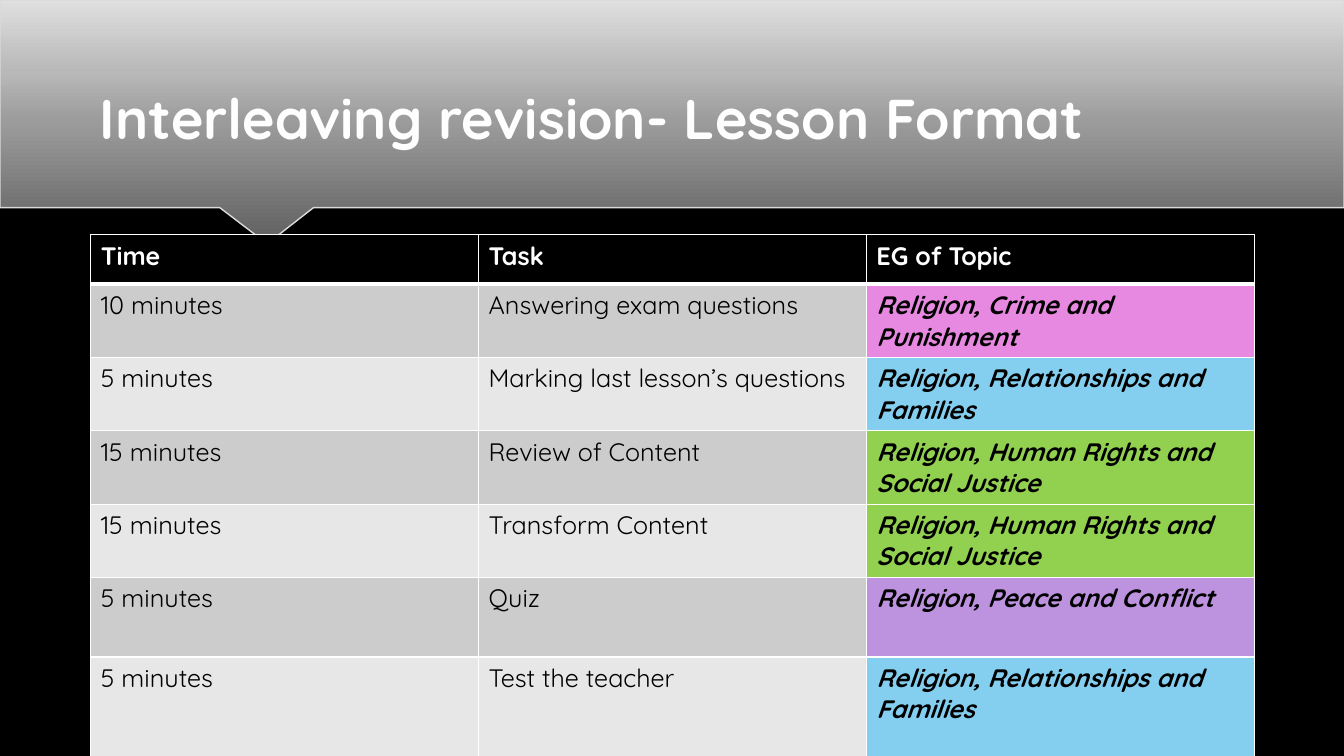
import dataclasses
import pptx
import pptx.dml.color
import pptx.enum.text
import pptx.oxml
import pptx.oxml.ns
import pptx.slide
import pptx.table
import pptx.text.text
import pptx.util

Inches = pptx.util.Inches
Pt = pptx.util.Pt
RGBColor = pptx.dml.color.RGBColor

FONT = "Quicksand"
BLACK = RGBColor(0x00, 0x00, 0x00)
WHITE = RGBColor(0xFF, 0xFF, 0xFF)
CREAM = RGBColor(0xFE, 0xFE, 0xFE)
EDGE = RGBColor(0xDA, 0xDA, 0xDA)
DARK = RGBColor(0xCC, 0xCC, 0xCC)
LIGHT = RGBColor(0xE7, 0xE7, 0xE7)
PINK = RGBColor(0xE7, 0x89, 0xE0)
BLUE = RGBColor(0x84, 0xCF, 0xF0)
GREEN = RGBColor(0x92, 0xD0, 0x50)
PURPLE = RGBColor(0xBD, 0x92, 0xDE)
FADE = (
    (0, RGBColor(0x61, 0x61, 0x61)),
    (50, RGBColor(0x9C, 0x9C, 0x9C)),
    (70, RGBColor(0xB8, 0xB8, 0xB8)),
    (100, RGBColor(0xDF, 0xDF, 0xDF)),
)
SHAPE = (
    (0, 0), (0, 2.06), (2.18, 2.06), (2.6, 2.38), (2.62, 2.39),
    (2.67, 2.39), (2.7, 2.38), (3.11, 2.06), (13.33, 2.06),
)


@dataclasses.dataclass(frozen=True)
class Step:
    time: str
    task: str
    topic: str
    tint: RGBColor
    height: float


HEADS = ("Time", "Task", "EG of Topic")
STEPS = (
    Step("10 minutes", "Answering exam questions",
         "Religion, Crime and Punishment", PINK, 0.7),
    Step("5 minutes", "Marking last lesson’s questions",
         "Religion, Relationships and Families", BLUE, 0.67),
    Step("15 minutes", "Review of Content",
         "Religion, Human Rights and Social Justice", GREEN, 0.7),
    Step("15 minutes", "Transform Content",
         "Religion, Human Rights and Social Justice", GREEN, 0.7),
    Step("5 minutes", "Quiz", "Religion, Peace and Conflict", PURPLE, 0.79),
    Step("5 minutes", "Test the teacher",
         "Religion, Relationships and Families", BLUE, 1),
)


def make(xml: str) -> pptx.oxml.xmlchemy.BaseOxmlElement:
    space = pptx.oxml.ns.nsdecls("a")
    return pptx.oxml.parse_xml(xml.replace(">", f" {space}>", 1))


def shade(alpha: int) -> pptx.oxml.xmlchemy.BaseOxmlElement:
    return make(
        f'<a:effectLst><a:outerShdw blurRad="{Pt(4)}" dist="{Pt(3)}" dir="5400000" '
        f'rotWithShape="0"><a:srgbClr val="{BLACK}"><a:alpha val="{alpha * 1000}"/>'
        "</a:srgbClr></a:outerShdw></a:effectLst>"
    )


def write(para: pptx.text.text._Paragraph, text: str, size: int, tint: RGBColor,
          bold: bool = False, slant: bool = False) -> pptx.text.text._Run:
    run = para.add_run()
    run.text = text
    font = run.font
    font.name, font.size = FONT, Pt(size)
    font.bold, font.italic = bold, slant
    font.color.rgb = tint
    return run


def draw_band(slide: pptx.slide.Slide) -> None:
    path = slide.shapes.build_freeform(Inches(13.33), 0)
    path.add_line_segments([(Inches(x), Inches(y)) for x, y in SHAPE], close=True)
    band = path.convert_to_shape()
    band.shadow.inherit = False
    band.line.color.rgb = EDGE
    band.line.width = Pt(1)
    band.fill.gradient()
    band.fill.gradient_angle = 90
    props = band._element.spPr
    stops = props.find(".//" + pptx.oxml.ns.qn("a:gsLst"))
    for stop in list(stops):
        stops.remove(stop)
    for spot, tint in FADE:
        stops.append(make(f'<a:gs pos="{spot * 1000}"><a:srgbClr val="{tint}"/></a:gs>'))
    props.replace(props.find(pptx.oxml.ns.qn("a:effectLst")), shade(35))


def draw_title(slide: pptx.slide.Slide) -> None:
    title = slide.shapes.title
    title.left, title.top = Inches(0.89), Inches(0.49)
    title.width, title.height = Inches(11.56), Inches(1.06)
    frame = title.text_frame
    frame.word_wrap = True
    frame.auto_size = pptx.enum.text.MSO_AUTO_SIZE.NONE
    frame.vertical_anchor = pptx.enum.text.MSO_ANCHOR.BOTTOM
    para = frame.paragraphs[0]
    para.alignment = pptx.enum.text.PP_ALIGN.LEFT
    run = write(para, "Interleaving revision- Lesson Format", 40, CREAM, bold=True)
    fill = run._r.rPr.find(pptx.oxml.ns.qn("a:solidFill"))
    fill.addnext(shade(60))
    slide.shapes._spTree.append(title._element)


def fill_cell(cell: pptx.table._Cell, text: str, back: RGBColor, ink: RGBColor,
              top: int, base: int, bold: bool, slant: bool) -> None:
    props = cell._tc.get_or_add_tcPr()
    for side, width in (("L", 1), ("R", 1), ("T", top), ("B", base)):
        props.append(make(
            f'<a:ln{side} w="{Pt(width)}"><a:solidFill><a:srgbClr val="{WHITE}"/>'
            f"</a:solidFill></a:ln{side}>"
        ))
    cell.fill.solid()
    cell.fill.fore_color.rgb = back
    write(cell.text_frame.paragraphs[0], text, 18, ink, bold, slant)


def draw_table(slide: pptx.slide.Slide) -> None:
    table = slide.shapes.add_table(
        len(STEPS) + 1, len(HEADS), Inches(0.9), Inches(2.33),
        Inches(11.54), Inches(5.05),
    ).table
    table.rows[0].height = Inches(0.49)
    for col, head in enumerate(HEADS):
        table.columns[col].width = Inches(11.54 / len(HEADS))
        fill_cell(table.cell(0, col), head, BLACK, WHITE, 1, 3, True, False)
    for row, step in enumerate(STEPS, 1):
        table.rows[row].height = Inches(step.height)
        back = DARK if row % 2 else LIGHT
        top = 3 if row == 1 else 1
        for col, text in enumerate((step.time, step.task, step.topic)):
            last = col == len(HEADS) - 1
            fill_cell(table.cell(row, col), text, step.tint if last else back,
                      BLACK, top, 1, last, last)


def main() -> None:
    deck = pptx.Presentation()
    deck.slide_width, deck.slide_height = Inches(13.33), Inches(7.5)
    slide = deck.slides.add_slide(deck.slide_layouts[5])
    slide.background.fill.solid()
    slide.background.fill.fore_color.rgb = BLACK
    draw_band(slide)
    draw_title(slide)
    draw_table(slide)
    deck.save("out.pptx")


if __name__ == "__main__":
    main()
